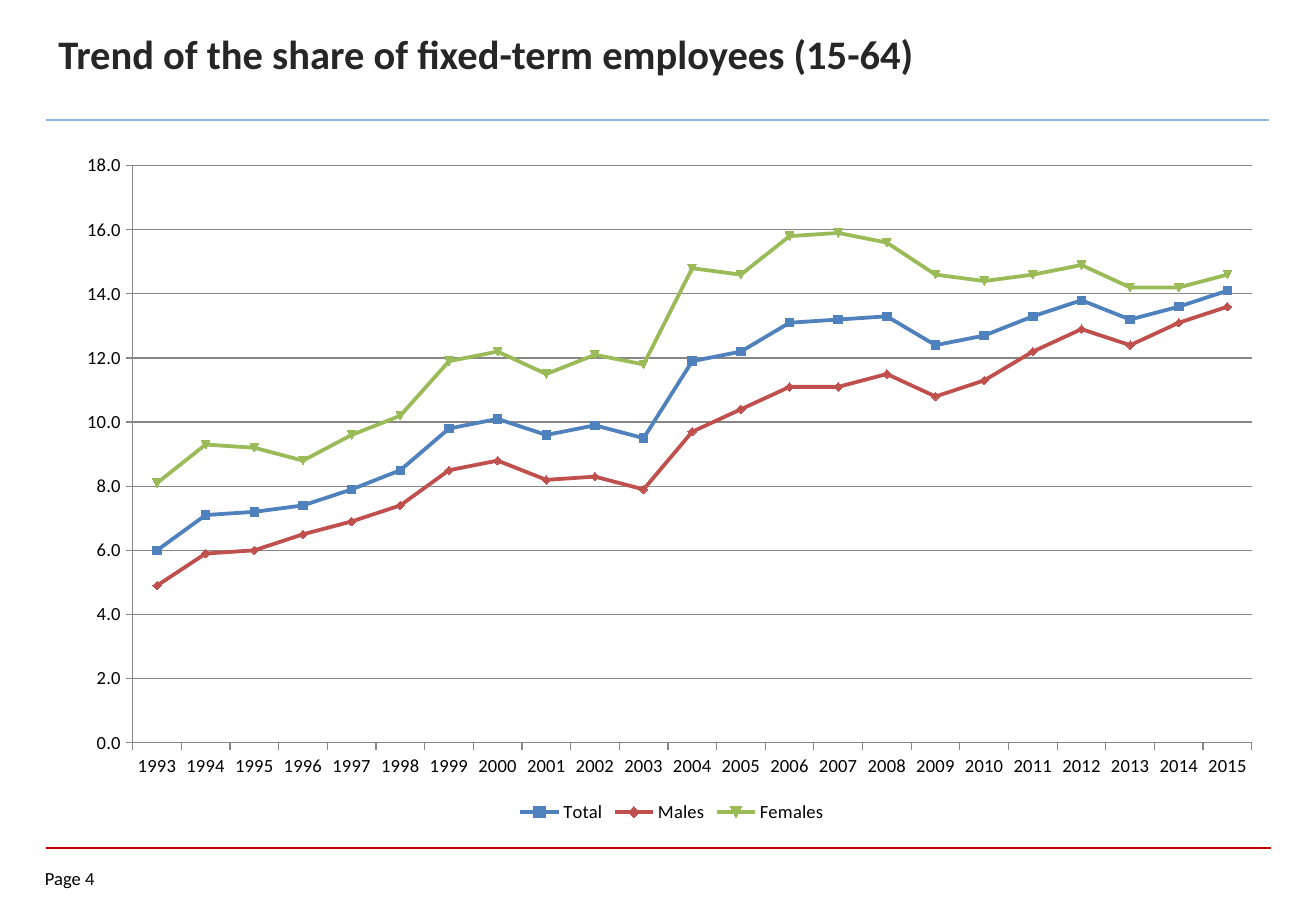
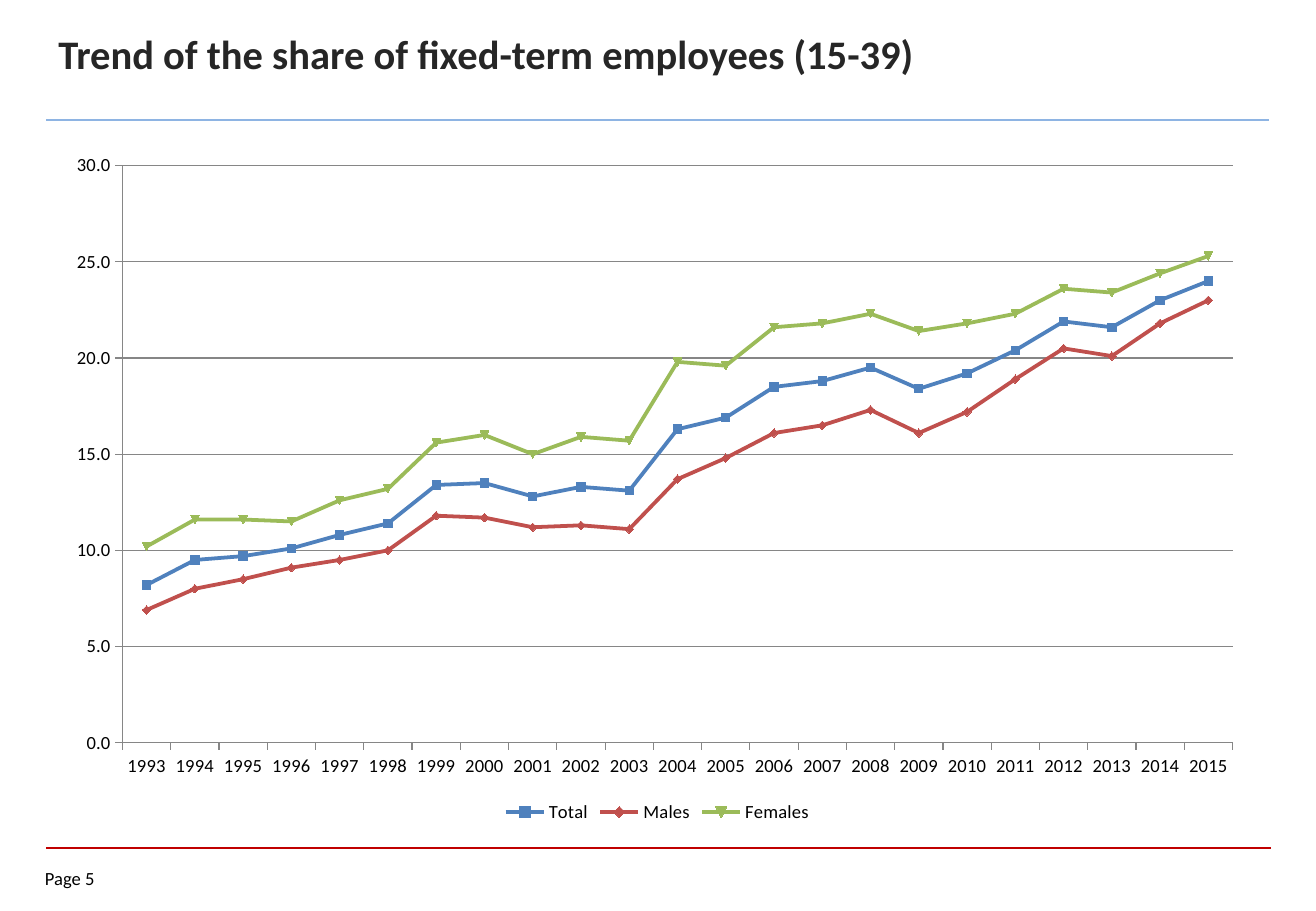
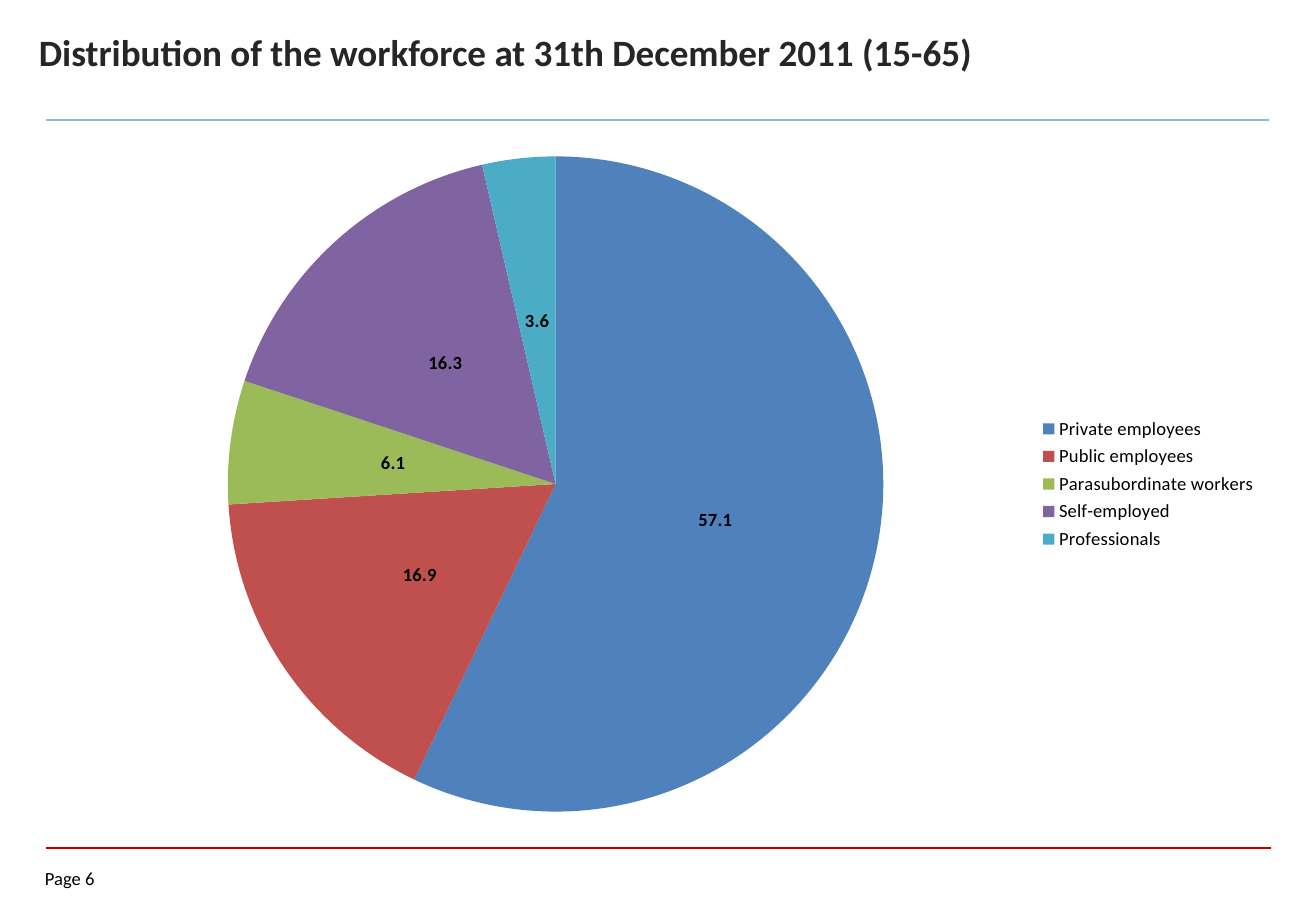
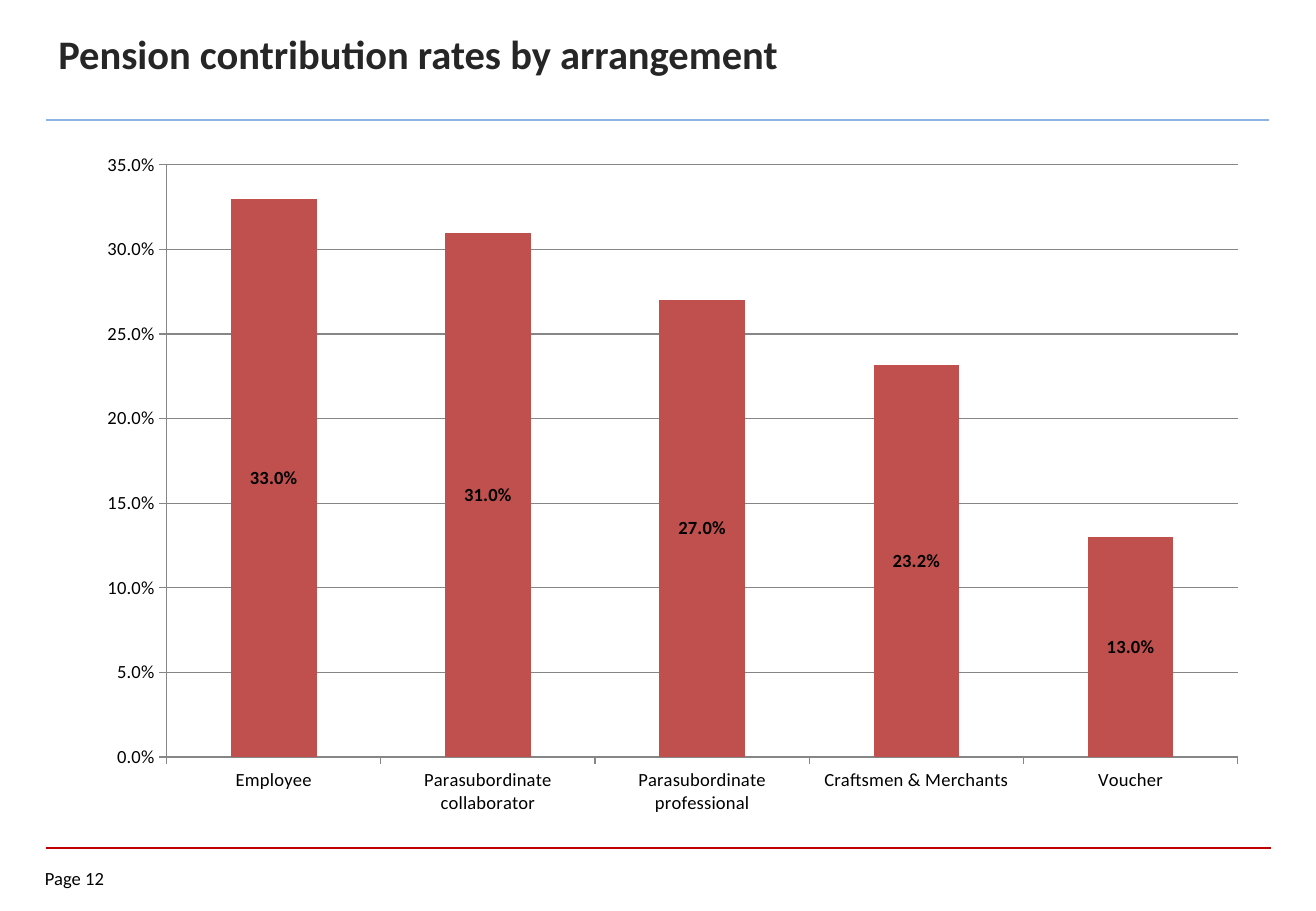
from dataclasses import dataclass

from lxml.etree import SubElement
from pptx import Presentation
from pptx.chart.data import CategoryChartData
from pptx.dml.color import RGBColor
from pptx.enum.chart import XL_CHART_TYPE, XL_LABEL_POSITION, XL_LEGEND_POSITION, XL_TICK_MARK
from pptx.enum.shapes import MSO_CONNECTOR
from pptx.enum.text import MSO_ANCHOR, MSO_AUTO_SIZE, PP_ALIGN
from pptx.oxml.ns import qn
from pptx.util import Inches, Pt


@dataclass(frozen=True)
class Theme:
    font: str = "Calibri"
    ink: str = "000000"
    heading: str = "262626"
    header_rule: str = "8EB4E3"
    footer_rule: str = "C00000"
    grid: str = "868686"
    accents: tuple = ("4F81BD", "C0504D", "9BBB59", "8064A2", "4BACC6")
    title_size: float = 24
    long_title_size: float = 22
    body_size: float = 11
    axis_width: float = 0.75
    series_width: float = 2.25


THEME = Theme()
SLIDE_SIZE = (10.83, 7.5)
RULES = [
    (0.38, 10.46, 6.98, THEME.footer_rule, 1),
    (0.38, 10.44, 0.99, THEME.header_rule, 1.5),
]
PAGE_BOX = (0.37, 7.14, 0.73, 0.22)
TREND_PLOT = {"x": 0.049, "y": 0.024, "w": 0.936, "h": 0.85}
YEARS = [str(year) for year in range(1993, 2016)]

SLIDES = [
    {
        "page": 4,
        "title": "Trend of the share of fixed-term employees (15-64)",
        "title_box": (0.38, 0.19, 8.43, 0.71),
        "kind": "trend",
        "chart_box": (0.61, 1.23, 9.84, 5.59),
        "top": 18,
        "step": 2,
        "categories": YEARS,
        "series": {
            "Total": [6, 7.1, 7.2, 7.4, 7.9, 8.5, 9.8, 10.1, 9.6, 9.9, 9.5, 11.9,
                      12.2, 13.1, 13.2, 13.3, 12.4, 12.7, 13.3, 13.8, 13.2, 13.6, 14.1],
            "Males": [4.9, 5.9, 6, 6.5, 6.9, 7.4, 8.5, 8.8, 8.2, 8.3, 7.9, 9.7,
                      10.4, 11.1, 11.1, 11.5, 10.8, 11.3, 12.2, 12.9, 12.4, 13.1, 13.6],
            "Females": [8.1, 9.3, 9.2, 8.8, 9.6, 10.2, 11.9, 12.2, 11.5, 12.1, 11.8, 14.8,
                        14.6, 15.8, 15.9, 15.6, 14.6, 14.4, 14.6, 14.9, 14.2, 14.2, 14.6],
        },
    },
    {
        "page": 5,
        "title": "Trend of the share of fixed-term employees (15-39)",
        "title_box": (0.38, 0.19, 8.43, 0.71),
        "kind": "trend",
        "chart_box": (0.53, 1.23, 9.76, 5.59),
        "top": 30,
        "step": 5,
        "categories": YEARS,
        "series": {
            "Total": [8.2, 9.5, 9.7, 10.1, 10.8, 11.4, 13.4, 13.5, 12.8, 13.3, 13.1, 16.3,
                      16.9, 18.5, 18.8, 19.5, 18.4, 19.2, 20.4, 21.9, 21.6, 23, 24],
            "Males": [6.9, 8, 8.5, 9.1, 9.5, 10, 11.8, 11.7, 11.2, 11.3, 11.1, 13.7,
                      14.8, 16.1, 16.5, 17.3, 16.1, 17.2, 18.9, 20.5, 20.1, 21.8, 23],
            "Females": [10.2, 11.6, 11.6, 11.5, 12.6, 13.2, 15.6, 16, 15, 15.9, 15.7, 19.8,
                        19.6, 21.6, 21.8, 22.3, 21.4, 21.8, 22.3, 23.6, 23.4, 24.4, 25.3],
        },
    },
    {
        "page": 6,
        "title": "Distribution of the workforce at 31th December 2011 (15-65)",
        "title_box": (0.22, 0.19, 8.98, 0.71),
        "title_size": THEME.long_title_size,
        "kind": "distribution",
        "chart_box": (0.61, 1.15, 9.84, 5.67),
        "categories": ["Private employees", "Public employees", "Parasubordinate workers",
                       "Self-employed", "Professionals"],
        "series": {"Workforce": [57.1, 16.9, 6.1, 16.3, 3.6]},
    },
    {
        "page": 12,
        "title": "Pension contribution rates by arrangement",
        "title_box": (0.38, 0.19, 7.56, 0.71),
        "kind": "rates",
        "chart_box": (0.69, 1.15, 9.69, 5.67),
        "top": 0.35,
        "step": 0.05,
        "categories": ["Employee", "Parasubordinate collaborator", "Parasubordinate professional",
                       "Craftsmen & Merchants", "Voucher"],
        "series": {"Rate": [0.33, 0.31, 0.27, 0.232, 0.13]},
    },
]

CHART_KINDS = {
    "trend": (XL_CHART_TYPE.LINE_MARKERS, "#,##0.0", XL_LEGEND_POSITION.BOTTOM),
    "distribution": (XL_CHART_TYPE.PIE, "0.0", XL_LEGEND_POSITION.RIGHT),
    "rates": (XL_CHART_TYPE.COLUMN_CLUSTERED, "0.0%", None),
}


def inches(box):
    return [Inches(length) for length in box]


def style_font(font, size, color=THEME.ink, bold=False):
    font.name = THEME.font
    font.size = Pt(size)
    font.bold = bold
    font.color.rgb = RGBColor.from_string(color)


def style_line(line, color, width):
    line.color.rgb = RGBColor.from_string(color)
    line.width = Pt(width)


def paint(fill, color):
    fill.solid()
    fill.fore_color.rgb = RGBColor.from_string(color)


def add_rules_to_layout(slide):
    for left, right, height, color, width in RULES:
        rule = slide.shapes.add_connector(
            MSO_CONNECTOR.STRAIGHT, *inches((left, height, right, height)))
        style_line(rule.line, color, width)
        SubElement(rule.element.spPr, qn("a:effectLst"))
        slide.slide_layout.shapes.element.append(rule.element)


def write_text(frame, text, size, color, bold=False):
    frame.auto_size = MSO_AUTO_SIZE.NONE
    frame.word_wrap = True
    frame.vertical_anchor = MSO_ANCHOR.TOP
    paragraph = frame.paragraphs[0]
    paragraph.alignment = PP_ALIGN.LEFT
    run = paragraph.add_run()
    run.text = text
    style_font(run.font, size, color, bold)


def add_title(slide, content):
    title = slide.shapes.title
    title.left, title.top, title.width, title.height = inches(content["title_box"])
    size = content.get("title_size", THEME.title_size)
    write_text(title.text_frame, content["title"], size, THEME.heading, True)


def add_page_number(slide, page):
    frame = slide.shapes.add_textbox(*inches(PAGE_BOX)).text_frame
    frame.margin_left = frame.margin_right = frame.margin_top = frame.margin_bottom = 0
    write_text(frame, f"Page {page}", THEME.body_size, THEME.ink)


def style_axes(chart, content, number_format):
    scale = chart.value_axis
    scale.minimum_scale = 0
    scale.maximum_scale = content["top"]
    scale.major_unit = content["step"]
    scale.tick_labels.number_format = number_format
    scale.tick_labels.number_format_is_linked = False
    scale.has_major_gridlines = True
    style_line(scale.major_gridlines.format.line, THEME.grid, THEME.axis_width)
    for axis in (scale, chart.category_axis):
        axis.major_tick_mark = XL_TICK_MARK.OUTSIDE
        axis.minor_tick_mark = XL_TICK_MARK.NONE
        style_line(axis.format.line, THEME.grid, THEME.axis_width)
        style_font(axis.tick_labels.font, THEME.body_size)


def add_value_labels(plot, number_format):
    plot.has_data_labels = True
    labels = plot.data_labels
    labels.show_value = True
    labels.show_percentage = False
    labels.position = XL_LABEL_POSITION.CENTER
    labels.number_format = number_format
    labels.number_format_is_linked = False
    style_font(labels.font, THEME.body_size, bold=True)


def place_plot(chart, shares):
    plot_area = chart.plots[0]._element.getparent()
    layout = plot_area.find(qn("c:layout"))
    if layout is None:
        layout = SubElement(plot_area, qn("c:layout"))
        plot_area.insert(0, layout)
    manual = SubElement(layout, qn("c:manualLayout"))
    settings = {"layoutTarget": "inner", "xMode": "edge", "yMode": "edge", **shares}
    for tag, value in settings.items():
        SubElement(manual, qn(f"c:{tag}")).set("val", str(value))


def style_trend(chart):
    place_plot(chart, TREND_PLOT)
    for series, color in zip(chart.plots[0].series, THEME.accents):
        series.smooth = False
        style_line(series.format.line, color, THEME.series_width)
        paint(series.marker.format.fill, color)
        style_line(series.marker.format.line, color, THEME.axis_width)


def style_distribution(chart):
    series = chart.plots[0].series[0]
    for index, color in enumerate(THEME.accents):
        paint(series.points[index].format.fill, color)


def style_rates(chart):
    plot = chart.plots[0]
    plot.gap_width = 150
    paint(plot.series[0].format.fill, THEME.accents[1])


STYLERS = {"trend": style_trend, "distribution": style_distribution, "rates": style_rates}


def add_content_chart(slide, content):
    kind = content["kind"]
    chart_type, number_format, legend_position = CHART_KINDS[kind]
    data = CategoryChartData(number_format=number_format)
    data.categories = content["categories"]
    for name, values in content["series"].items():
        data.add_series(name, values)
    chart = slide.shapes.add_chart(chart_type, *inches(content["chart_box"]), data).chart
    chart.has_title = False
    style_font(chart.font, THEME.body_size)
    chart.plots[0].vary_by_categories = kind == "distribution"
    chart.has_legend = legend_position is not None
    if chart.has_legend:
        chart.legend.position = legend_position
        chart.legend.include_in_layout = False
        style_font(chart.legend.font, THEME.body_size)
    if "top" in content:
        style_axes(chart, content, number_format)
    if kind != "trend":
        add_value_labels(chart.plots[0], number_format)
    STYLERS[kind](chart)


def main():
    deck = Presentation()
    deck.slide_width, deck.slide_height = inches(SLIDE_SIZE)
    title_only = deck.slide_layouts[5]
    for index, content in enumerate(SLIDES):
        slide = deck.slides.add_slide(title_only)
        if index == 0:
            add_rules_to_layout(slide)
        add_page_number(slide, content["page"])
        add_title(slide, content)
        add_content_chart(slide, content)
    deck.save("out.pptx")


if __name__ == "__main__":
    main()
